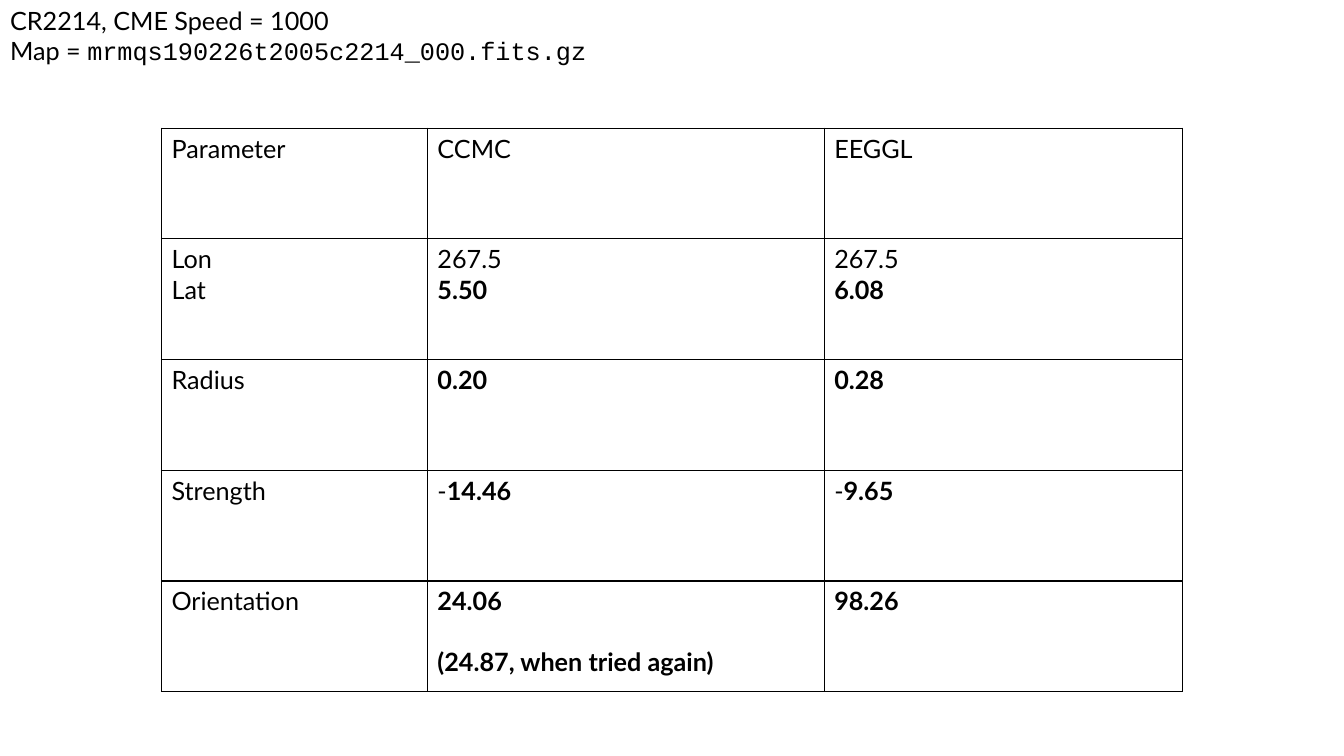
"""Build the slide comparing CCMC and EEGGL parameters for CR2214."""
from dataclasses import dataclass

from lxml import etree
from pptx import Presentation
from pptx.dml.color import RGBColor
from pptx.enum.text import MSO_ANCHOR, MSO_AUTO_SIZE, PP_ALIGN
from pptx.oxml.ns import qn
from pptx.util import Cm, Pt

TOP, NO_FIT, LEFT = MSO_ANCHOR.TOP, MSO_AUTO_SIZE.NONE, PP_ALIGN.LEFT
TITLE_ONLY = 5


@dataclass(frozen=True)
class Theme:
    ink: str = "000000"
    sans: str = "Lato"
    mono: str = "Courier New"
    size: int = 18
    rule: int = 1
    blank_line: float = 21.5


THEME = Theme()
PLAIN = {"name": THEME.sans, "size": Pt(THEME.size), "bold": False}
BOLD = {**PLAIN, "bold": True}
MONO = {**PLAIN, "name": THEME.mono}

HEADING = [
    [("CR2214, CME Speed = 1000", PLAIN)],
    [("Map = ", PLAIN), ("mrmqs190226t2005c2214_000.fits.gz", MONO)],
]
PARAMETERS = [
    [[[("Parameter", PLAIN)]], [[("CCMC", PLAIN)]], [[("EEGGL", PLAIN)]]],
    [
        [[("Lon", PLAIN)], [("Lat", PLAIN)]],
        [[("267.5", PLAIN)], [("5.50", BOLD)]],
        [[("267.5", PLAIN)], [("6.08", BOLD)]],
    ],
    [[[("Radius", PLAIN)]], [[("0.20", BOLD)]], [[("0.28", BOLD)]]],
    [
        [[("Strength", PLAIN)]],
        [[("-", PLAIN), ("14.46", BOLD)]],
        [[("-", PLAIN), ("9.65", BOLD)]],
    ],
    [
        [[("Orientation", PLAIN)]],
        [[("24.06", BOLD)], [("(24.87, when tried again)", BOLD)]],
        [[("98.26", BOLD)]],
    ],
]
COLUMN_WIDTHS = [6.7, 10, 9.04]
ROW_HEIGHTS = [2.79, 3.04, 2.79, 2.79, 2.79]
ORIENTATION = len(PARAMETERS) - 1


def apply(target, values):
    for attribute, value in values.items():
        setattr(target, attribute, value)


def write(frame, lines, gap=0):
    for index, line in enumerate(lines):
        paragraph = frame.add_paragraph() if index else frame.paragraphs[0]
        apply(paragraph, {"alignment": LEFT, "line_spacing": 1.0,
                          "space_before": Pt(gap if index else 0)})
        for words, style in line:
            run = paragraph.add_run()
            run.text = words
            apply(run.font, style)
            run.font.color.rgb = RGBColor.from_string(THEME.ink)


def outline(cell):
    properties = cell._tc.get_or_add_tcPr()
    for side in ("a:lnL", "a:lnR", "a:lnT", "a:lnB"):
        edge = etree.SubElement(properties, qn(side), w=str(Pt(THEME.rule)))
        fill = etree.SubElement(edge, qn("a:solidFill"))
        etree.SubElement(fill, qn("a:srgbClr"), val=THEME.ink)
    cell.fill.background()


def add_parameters(slide):
    table = slide.shapes.add_table(
        len(ROW_HEIGHTS), len(COLUMN_WIDTHS), Cm(4.07), Cm(3.23),
        Cm(sum(COLUMN_WIDTHS)), Cm(sum(ROW_HEIGHTS))).table
    apply(table, {"first_row": False, "horz_banding": False})
    for column, width in zip(table.columns, COLUMN_WIDTHS):
        column.width = Cm(width)
    for row, height in zip(table.rows, ROW_HEIGHTS):
        row.height = Cm(height)
    for row_index, entries in enumerate(PARAMETERS):
        gap = THEME.blank_line if row_index == ORIENTATION else 0
        for column_index, lines in enumerate(entries):
            cell = table.cell(row_index, column_index)
            write(cell.text_frame, lines, gap)
            outline(cell)


def add_heading(slide):
    heading = slide.shapes.title
    apply(heading, {"left": Cm(0), "top": Cm(0), "width": Cm(24), "height": Cm(2.57)})
    apply(heading.text_frame, {"word_wrap": True, "auto_size": NO_FIT,
                               "vertical_anchor": TOP})
    write(heading.text_frame, HEADING)


def main():
    deck = Presentation()
    apply(deck, {"slide_width": Cm(33.87), "slide_height": Cm(19.05)})
    slide = deck.slides.add_slide(deck.slide_layouts[TITLE_ONLY])
    add_parameters(slide)
    add_heading(slide)
    deck.save("out.pptx")


if __name__ == "__main__":
    main()
